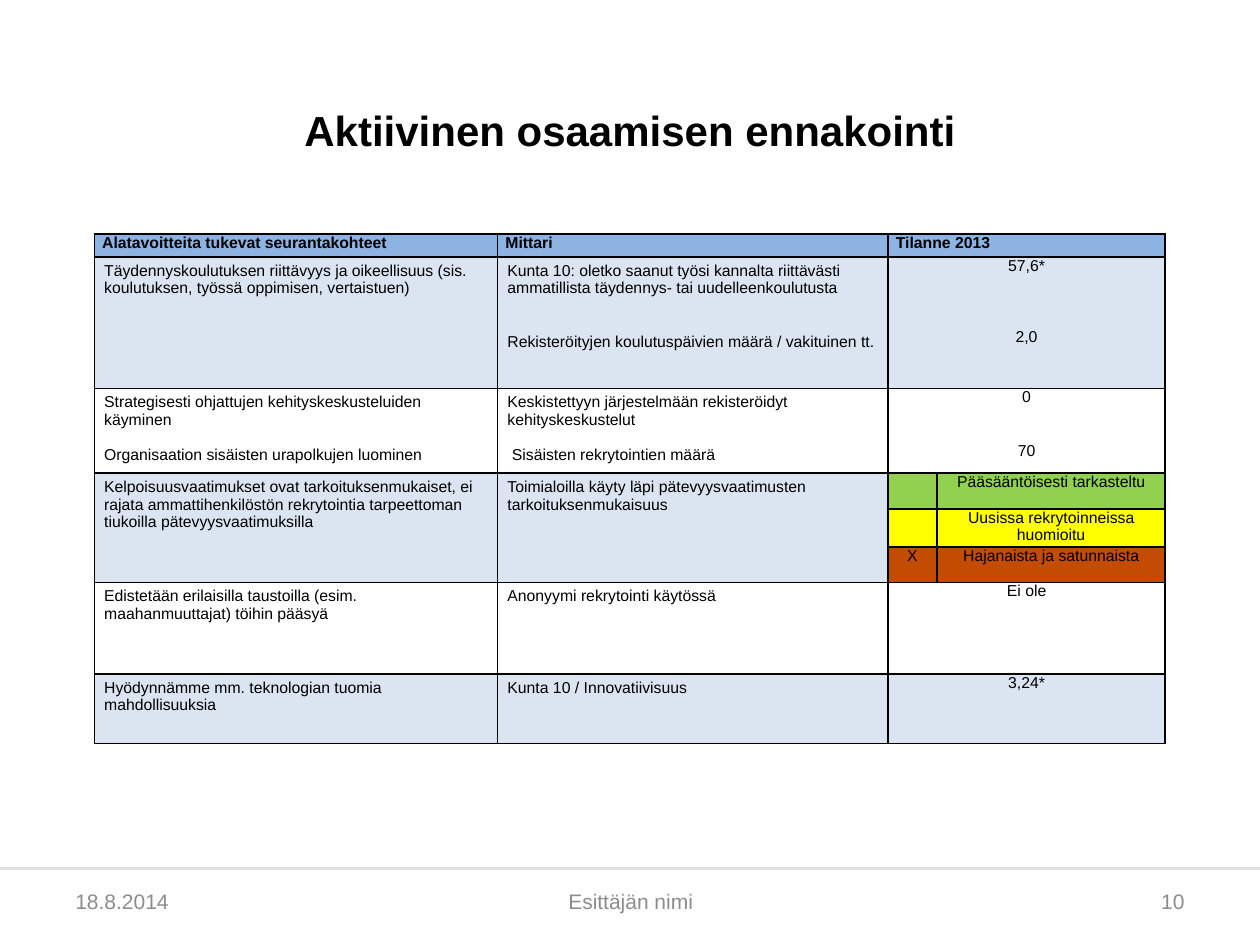
from lxml.etree import SubElement
from pptx import Presentation
from pptx.dml.color import RGBColor
from pptx.enum.shapes import MSO_CONNECTOR, MSO_SHAPE
from pptx.enum.text import MSO_ANCHOR as Anchor, PP_ALIGN as Align
from pptx.oxml.ns import qn
from pptx.util import Cm, Pt

BLACK = RGBColor(0x00, 0x00, 0x00)
WHITE = RGBColor(0xFF, 0xFF, 0xFF)
GREY = RGBColor(0x8C, 0x8C, 0x8C)
RULE = RGBColor(0xDF, 0xDF, 0xDF)
HEADER = RGBColor(0x8D, 0xB3, 0xE2)
BAND = RGBColor(0xDB, 0xE5, 0xF1)
GREEN = RGBColor(0x92, 0xD0, 0x50)
YELLOW = RGBColor(0xFF, 0xFF, 0x00)
RUST = RGBColor(0xC4, 0x4B, 0x02)

FONT = "Arial"
LINE = 10.3  # height in points of one 9 pt line

# Content
TITLE = "Aktiivinen osaamisen ennakointi"
FOOTER = [  # text, left, width, alignment
    ("18.8.2014", 1.27, 5.92, Align.LEFT),
    ("Esittäjän nimi", 8.69, 8.05, Align.CENTER),
    ("10", 18.21, 5.92, Align.RIGHT),
]
COLUMNS = [8.13, 7.87, 0.99, 4.6]
HEIGHTS = [0.46, 2.65, 1.63, 0.72, 0.72, 0.72, 1.84, 1.4]
HEADINGS = ["Alatavoitteita tukevat seurantakohteet", "Mittari", "Tilanne 2013"]

# Each cell: its paragraphs, and the number of lines left free between them
ROWS = {
    1: (BAND, [
        (["Täydennyskoulutuksen riittävyys ja oikeellisuus (sis. koulutuksen, "
          "työssä oppimisen, vertaistuen)"], 0),
        (["Kunta 10: oletko saanut työsi kannalta riittävästi ammatillista "
          "täydennys- tai uudelleenkoulutusta",
          "Rekisteröityjen koulutuspäivien määrä / vakituinen tt."], 2),
        (["57,6*", "2,0"], 3)]),
    2: (None, [
        (["Strategisesti ohjattujen kehityskeskusteluiden käyminen",
          "Organisaation sisäisten urapolkujen luominen"], 1),
        (["Keskistettyyn järjestelmään rekisteröidyt kehityskeskustelut",
          "Sisäisten rekrytointien määrä"], 1),
        (["0", "70"], 2)]),
    3: (BAND, [
        (["Kelpoisuusvaatimukset ovat tarkoituksenmukaiset, ei rajata "
          "ammattihenkilöstön rekrytointia tarpeettoman tiukoilla "
          "pätevyysvaatimuksilla"], 0),
        (["Toimialoilla käyty läpi pätevyysvaatimusten "
          "tarkoituksenmukaisuus"], 0)]),
    6: (None, [
        (["Edistetään erilaisilla taustoilla (esim. maahanmuuttajat) "
          "töihin pääsyä"], 0),
        (["Anonyymi rekrytointi käytössä"], 0),
        (["Ei ole"], 0)]),
    7: (BAND, [
        (["Hyödynnämme mm. teknologian tuomia mahdollisuuksia"], 0),
        (["Kunta 10 / Innovatiivisuus"], 0),
        (["3,24*"], 0)]),
}
RATING_ROW = 3
RATINGS = [  # mark, level, colour
    ("", "Pääsääntöisesti tarkasteltu", GREEN),
    ("", "Uusissa rekrytoinneissa huomioitu", YELLOW),
    ("X", "Hajanaista ja satunnaista", RUST),
]


def format_runs(paragraph, size, color, bold=False):
    for run in paragraph.runs:
        run.font.name, run.font.size = FONT, Pt(size)
        run.font.color.rgb, run.font.bold = color, bold


def add_text(slide, text, box, size, color, align, anchor, bold=False):
    text_frame = slide.shapes.add_textbox(*map(Cm, box)).text_frame
    text_frame.word_wrap = True
    text_frame.vertical_anchor = anchor
    text_frame.text = text
    text_frame.paragraphs[0].alignment = align
    format_runs(text_frame.paragraphs[0], size, color, bold)
    return text_frame


def style_cell(cell, fill):
    properties = cell._tc.get_or_add_tcPr()
    for side in ("a:lnL", "a:lnR", "a:lnT", "a:lnB"):
        border = SubElement(properties, qn(side), w=str(Pt(1)))
        solid = SubElement(border, qn("a:solidFill"))
        SubElement(solid, qn("a:srgbClr"), val=str(BLACK))
    if fill is None:
        cell.fill.background()
    else:
        cell.fill.solid()
        cell.fill.fore_color.rgb = fill


def fill_cell(cell, texts, margins=(0, 0), align=Align.LEFT, free_lines=0, bold=False):
    cell.margin_left = cell.margin_right = Cm(margins[0])
    cell.margin_top = cell.margin_bottom = Cm(margins[1])
    cell.text_frame.text = "\n".join(texts)
    for index, paragraph in enumerate(cell.text_frame.paragraphs):
        paragraph.alignment = align
        if index:
            paragraph.space_before = Pt(free_lines * LINE)
        format_runs(paragraph, 9, BLACK, bold)
        if not paragraph.runs:  # keeps an empty cell from stretching its row
            SubElement(paragraph._p, qn("a:endParaRPr"), sz="900")


def add_table(slide):
    frame = slide.shapes.add_table(len(HEIGHTS), len(COLUMNS), Cm(1.9), Cm(4.72),
                                   Cm(sum(COLUMNS)), Cm(sum(HEIGHTS)))
    table = frame.table
    table.first_row = table.horz_banding = False
    for column, width in zip(table.columns, COLUMNS):
        column.width = Cm(width)
    for row, height in zip(table.rows, HEIGHTS):
        row.height = Cm(height)

    # Fills and borders
    fills = {0: HEADER, **{row: fill for row, (fill, _) in ROWS.items()}}
    last_rating = RATING_ROW + len(RATINGS) - 1
    for row in range(len(HEIGHTS)):
        rating = RATING_ROW <= row <= last_rating
        for column in range(len(COLUMNS)):
            fill = fills[RATING_ROW if rating else row]
            if rating and column >= 2:
                fill = RATINGS[row - RATING_ROW][2]
            style_cell(table.cell(row, column), fill)
        if not rating:
            table.cell(row, 2).merge(table.cell(row, 3))
    for column in (0, 1):
        table.cell(RATING_ROW, column).merge(table.cell(last_rating, column))

    # Texts
    for column, heading in enumerate(HEADINGS):
        fill_cell(table.cell(0, column), [heading], (0.16, 0), bold=True)
    for row, (_, cells) in ROWS.items():
        for column, (texts, free_lines) in enumerate(cells):
            status = column == 2
            fill_cell(table.cell(row, column), texts, (0, 0) if status else (0.2, 0.1),
                      Align.CENTER if status else Align.LEFT, free_lines)
    for row, (mark, level, _) in enumerate(RATINGS, RATING_ROW):
        fill_cell(table.cell(row, 2), [mark], align=Align.CENTER)
        fill_cell(table.cell(row, 3), [level], align=Align.CENTER)

    # Slight indent of the recruitment measure
    recruitment = table.cell(2, 1).text_frame.paragraphs[1]
    recruitment._p.get_or_add_pPr().set("marL", str(Cm(0.09)))


def main():
    presentation = Presentation()
    presentation.slide_width, presentation.slide_height = Cm(25.4), Cm(19.05)
    slide = presentation.slides.add_slide(presentation.slide_layouts[6])

    # Footer band and rule
    band = slide.shapes.add_shape(MSO_SHAPE.RECTANGLE, 0, Cm(17.53), Cm(25.4), Cm(1.52))
    band.shadow.inherit = False
    band.fill.solid()
    band.fill.fore_color.rgb = WHITE
    band.line.fill.background()
    rule = slide.shapes.add_connector(MSO_CONNECTOR.STRAIGHT, 0, Cm(17.5), Cm(25.4), Cm(17.5))
    rule.line.color.rgb, rule.line.width = RULE, Pt(1.75)
    SubElement(rule._element.spPr, qn("a:effectLst"))
    for text, left, width, align in FOOTER:
        add_text(slide, text, (left, 17.65, width, 1.02), 12, GREY, align, Anchor.MIDDLE)

    # Title
    title = add_text(slide, TITLE, (1.9, 1.73, 21.6, 1.4), 24, BLACK,
                     Align.CENTER, Anchor.BOTTOM, bold=True)
    title.margin_left = title.margin_right = title.margin_top = title.margin_bottom = 0

    add_table(slide)
    presentation.save("out.pptx")


if __name__ == "__main__":
    main()
